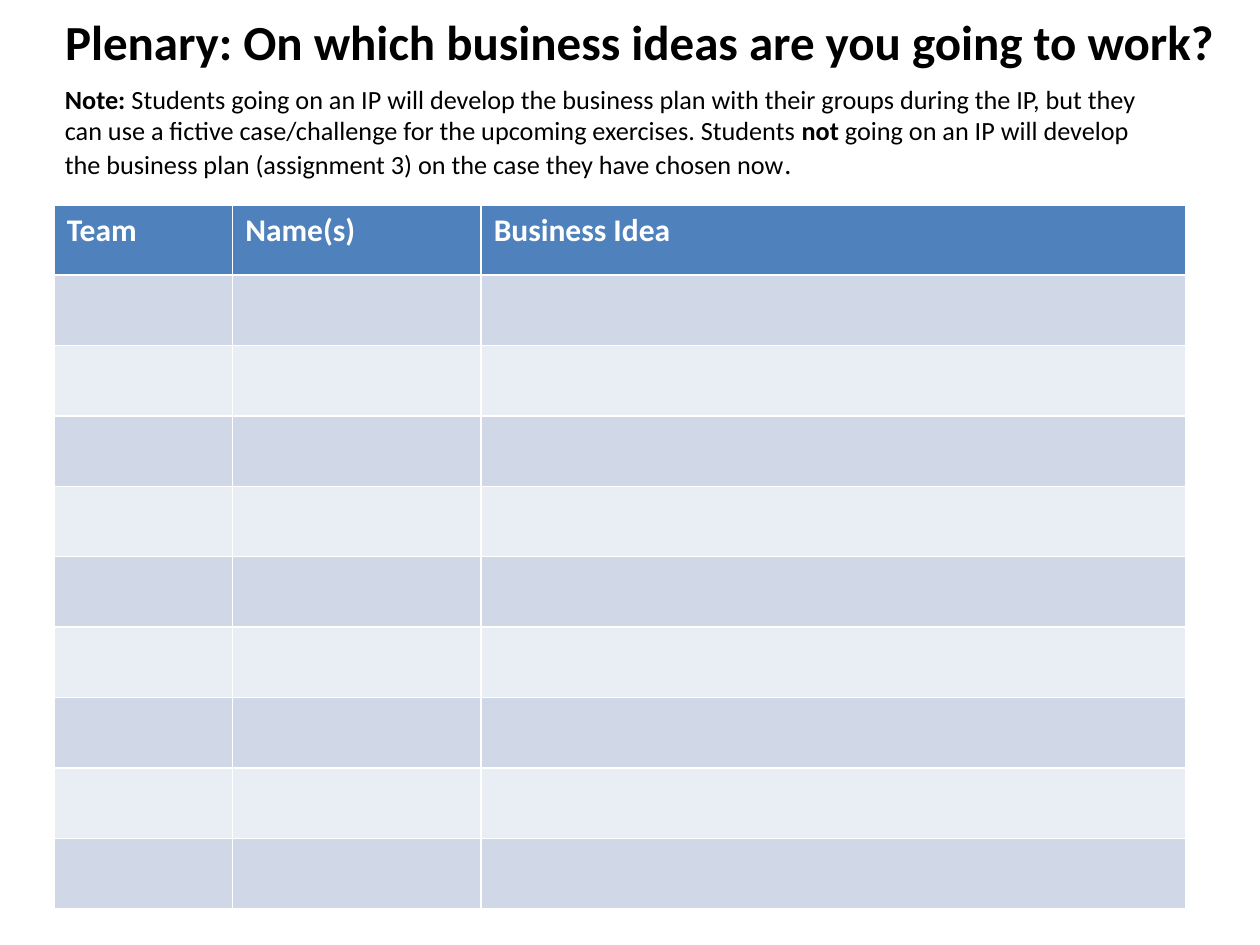
"""Build a slide with a title, a note and a table for teams and their business ideas."""
from pptx import Presentation
from pptx.dml.color import RGBColor
from pptx.enum.text import MSO_ANCHOR as Anchor, MSO_AUTO_SIZE as Auto, PP_ALIGN as Align
from pptx.util import Pt


def style(run, size, color, bold):
    run.font.name = "Calibri"
    run.font.size = Pt(size)
    run.font.bold = bold
    run.font.color.rgb = RGBColor.from_string(color)


def place(shape, left, top, width, height):
    shape.left, shape.top = Pt(left), Pt(top)
    shape.width, shape.height = Pt(width), Pt(height)


deck = Presentation()
deck.slide_width, deck.slide_height = Pt(720), Pt(540)
slide = deck.slides.add_slide(deck.slide_layouts[5])

title = slide.shapes.title
place(title, 30, 3, 680.5, 41)
frame = title.text_frame
frame.text = "Plenary: On which business ideas are you going to work?"
frame.auto_size = Auto.NONE
frame.word_wrap = True
frame.vertical_anchor = Anchor.TOP
frame.paragraphs[0].alignment = Align.LEFT
style(frame.paragraphs[0].runs[0], 28, "000000", True)

heads = ["Team", "Name(s)", "Business Idea"]
widths = [102, 142, 402.5]
count, height = 10, 40.25
grid = slide.shapes.add_table(
    count, len(heads), Pt(31), Pt(117), Pt(sum(widths)), Pt(count * height)
).table
for col, width in zip(grid.columns, widths):
    col.width = Pt(width)
for num, row in enumerate(grid.rows):
    row.height = Pt(height)
    shade = "4F81BD" if num == 0 else "D0D8E8" if num % 2 else "E9EDF4"
    for cell in row.cells:
        cell.fill.solid()
        cell.fill.fore_color.rgb = RGBColor.from_string(shade)
for cell, head in zip(grid.rows[0].cells, heads):
    cell.text_frame.text = head
    style(cell.text_frame.paragraphs[0].runs[0], 18, "FFFFFF", True)

parts = [
    ("Note: ", 15, True),
    ("Students going on an IP will develop the business plan with their groups "
     "during the IP, but they can use a fictive case/challenge for the upcoming "
     "exercises. Students ", 15, False),
    ("not ", 15, True),
    ("going on an IP will develop the business plan (assignment 3) on the case "
     "they have chosen now", 15, False),
    (".", 16, False),
]
note = slide.shapes.add_textbox(Pt(30), Pt(44), Pt(636), Pt(63.5))
note.text_frame.word_wrap = True
for text, size, bold in parts:
    run = note.text_frame.paragraphs[0].add_run()
    run.text = text
    style(run, size, "000000", bold)

deck.save("out.pptx")
